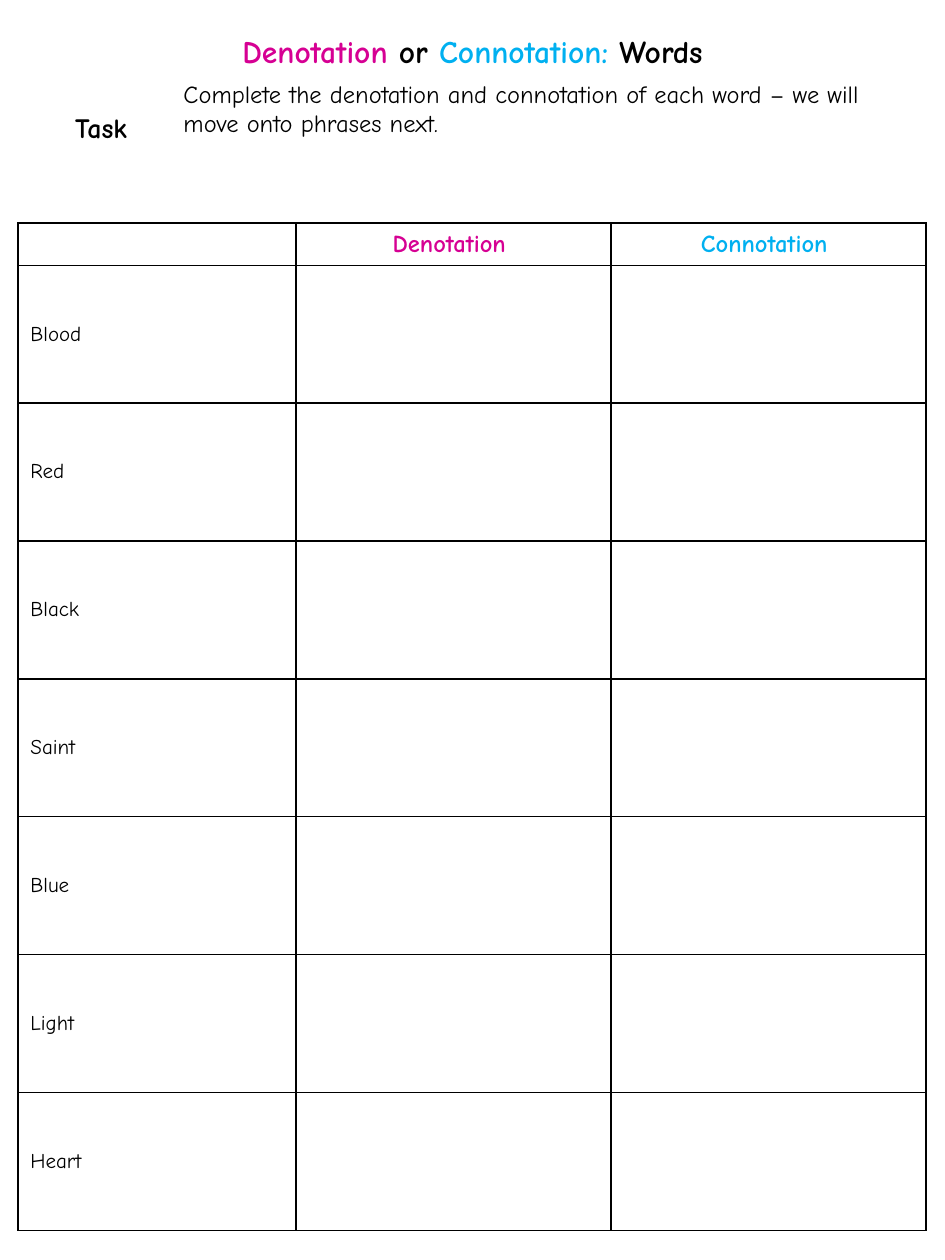
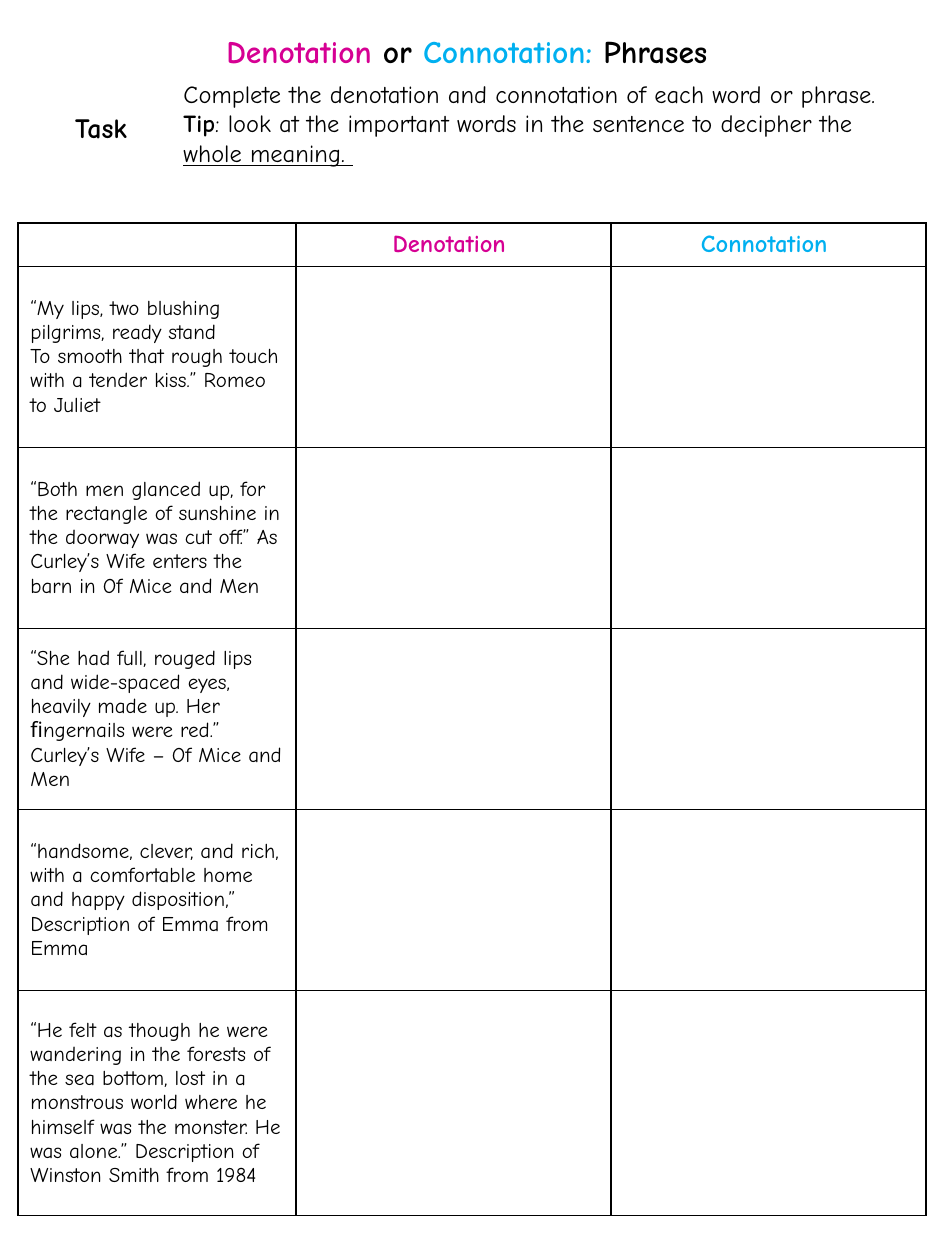
import dataclasses

import lxml.etree
import pptx
import pptx.dml.color
import pptx.enum.text
import pptx.oxml.ns
import pptx.util

Cm = pptx.util.Cm
Pt = pptx.util.Pt
RGB = pptx.dml.color.RGBColor.from_string
PP_ALIGN = pptx.enum.text.PP_ALIGN
MSO_ANCHOR = pptx.enum.text.MSO_ANCHOR
MSO_AUTO_SIZE = pptx.enum.text.MSO_AUTO_SIZE


@dataclasses.dataclass(frozen=True)
class Theme:
    font: str = "Comic Neue"
    ink: str = "000000"
    paper: str = "FFFFFF"
    denotation: str = "D60093"
    connotation: str = "00B0F0"
    title: int = 18
    label: int = 16
    body: int = 14
    cell: int = 12
    border: float = 1


theme = Theme()


def format_paragraph(p, size, color=theme.ink, bold=False, align=PP_ALIGN.LEFT):
    p.alignment = align
    p.font.name = theme.font
    p.font.size = Pt(size)
    p.font.bold = bold
    p.font.color.rgb = RGB(color)


def add_border(cell):
    tcPr = cell._tc.get_or_add_tcPr()
    for side in ("a:lnL", "a:lnR", "a:lnT", "a:lnB"):
        ln = lxml.etree.SubElement(tcPr, pptx.oxml.ns.qn(side), w=str(Pt(theme.border)))
        fill = lxml.etree.SubElement(ln, pptx.oxml.ns.qn("a:solidFill"))
        lxml.etree.SubElement(fill, pptx.oxml.ns.qn("a:srgbClr"), val=theme.ink)


headers = [("", theme.ink), ("Denotation ", theme.denotation), ("Connotation ", theme.connotation)]
column_widths = [5.61, 6.35, 6.35]

worksheets = [
    {
        "topic": "Words",
        "title_width": 11.13,
        "task_height": 1.45,
        "task": [[("Complete the denotation and connotation of each word – we will move onto phrases next.", False, False)]],
        "entries": ["Blood", "Red", "Black", "Saint", "Blue", "Light", "Heart"],
        "row_heights": [0.77] + [2.78] * 7,
    },
    {
        "topic": "Phrases ",
        "title_width": 11.76,
        "task_height": 2.64,
        "task": [
            [("Complete the denotation and connotation of each word or phrase.", False, False)],
            [
                ("Tip", True, False),
                (": look at the important words in the sentence to decipher the ", False, False),
                ("whole meaning. ", False, True),
            ],
        ],
        "entries": [
            "“My lips, two blushing pilgrims, ready stand\nTo smooth that rough touch with a tender kiss.” Romeo to Juliet",
            "“Both men glanced up, for the rectangle of sunshine in the doorway was cut off.” As Curley’s Wife enters the barn in Of Mice and Men",
            "“She had full, rouged lips and wide-spaced eyes, heavily made up. Her ﬁngernails were red.” Curley’s Wife – Of Mice and Men",
            "“handsome, clever, and rich, with a comfortable home and happy disposition,” Description of Emma from Emma",
            "“He felt as though he were wandering in the forests of the sea bottom, lost in a monstrous world where he himself was the monster. He was alone.” Description of Winston Smith from 1984",
        ],
        "row_heights": [0.87] + [3.65] * 4 + [4.53],
    },
]

prs = pptx.Presentation()
prs.slide_width = Cm(19.05)
prs.slide_height = Cm(25.4)

for sheet in worksheets:
    s = prs.slides.add_slide(prs.slide_layouts[5])

    sp = s.shapes.title
    sp.width, sp.height = Cm(sheet["title_width"]), Cm(1.02)
    sp.left, sp.top = (prs.slide_width - sp.width) // 2, Cm(0.51)
    tf = sp.text_frame
    tf.word_wrap = False
    tf.auto_size = MSO_AUTO_SIZE.SHAPE_TO_FIT_TEXT
    tf.vertical_anchor = MSO_ANCHOR.TOP
    p = tf.paragraphs[0]
    format_paragraph(p, theme.title, bold=True, align=PP_ALIGN.CENTER)
    for text, color in [
        ("Denotation ", theme.denotation),
        ("or ", theme.ink),
        ("Connotation: ", theme.connotation),
        (sheet["topic"], theme.ink),
    ]:
        r = p.add_run()
        r.text = text
        r.font.color.rgb = RGB(color)

    heights = sheet["row_heights"]
    table = s.shapes.add_table(
        len(heights), len(headers), Cm(0.36), Cm(4.5), Cm(sum(column_widths)), Cm(sum(heights))
    ).table
    table.first_row = False
    table.horz_banding = False
    for column, width in zip(table.columns, column_widths):
        column.width = Cm(width)
    for row, height in zip(table.rows, heights):
        row.height = Cm(height)
    for cell in table.iter_cells():
        add_border(cell)
        cell.fill.solid()
        cell.fill.fore_color.rgb = RGB(theme.paper)
        cell.vertical_anchor = MSO_ANCHOR.MIDDLE
        format_paragraph(cell.text_frame.paragraphs[0], theme.cell)
    for column, (text, color) in enumerate(headers):
        if text:
            p = table.cell(0, column).text_frame.paragraphs[0]
            p.text = text
            format_paragraph(p, theme.body, color, True, PP_ALIGN.CENTER)
    for row, text in enumerate(sheet["entries"], start=1):
        table.cell(row, 0).text_frame.paragraphs[0].text = text

    sp = s.shapes.add_textbox(Cm(1.24), Cm(2.11), Cm(1.8), Cm(0.94))
    tf = sp.text_frame
    tf.word_wrap = False
    tf.auto_size = MSO_AUTO_SIZE.SHAPE_TO_FIT_TEXT
    p = tf.paragraphs[0]
    p.text = "Task "
    format_paragraph(p, theme.label, bold=True, align=PP_ALIGN.CENTER)

    sp = s.shapes.add_textbox(Cm(3.45), Cm(1.47), Cm(15.09), Cm(sheet["task_height"]))
    tf = sp.text_frame
    tf.word_wrap = True
    tf.auto_size = MSO_AUTO_SIZE.SHAPE_TO_FIT_TEXT
    for i, runs in enumerate(sheet["task"]):
        p = tf.add_paragraph() if i else tf.paragraphs[0]
        format_paragraph(p, theme.body)
        for text, bold, underline in runs:
            r = p.add_run()
            r.text = text
            r.font.bold = bold
            r.font.underline = underline

prs.save("out.pptx")
